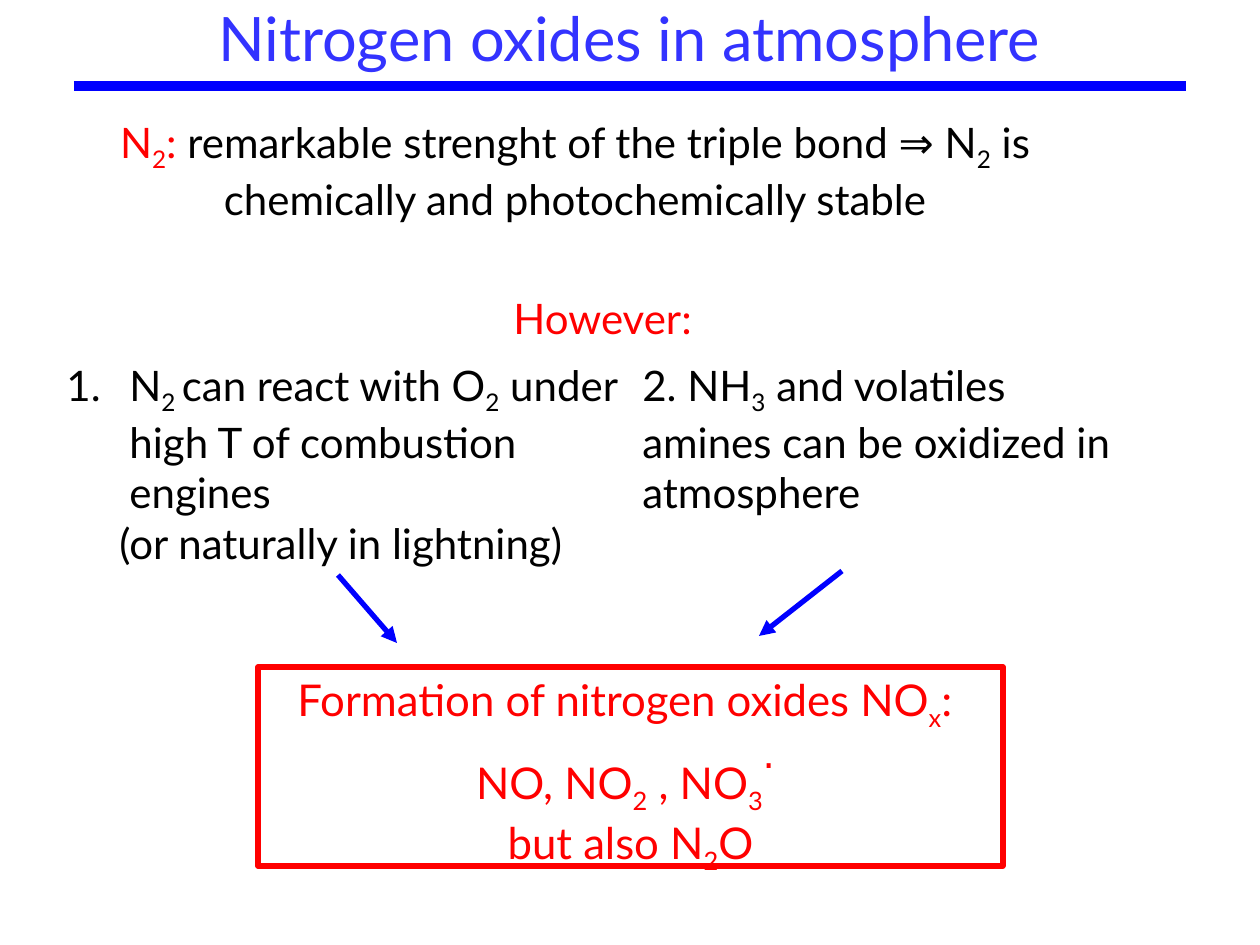
from lxml import etree
from pptx import Presentation
from pptx.dml.color import RGBColor
from pptx.enum.shapes import MSO_CONNECTOR, MSO_SHAPE
from pptx.enum.text import MSO_ANCHOR, MSO_AUTO_SIZE, PP_ALIGN
from pptx.oxml.ns import qn
from pptx.util import Pt

EMU_PER_PX = 914400 / 126
FONT = "Lato"
COLORS = {"title": "3333FF", "blue": "0000FF", "red": "FF0000", "black": "000000", "white": "FFFFFF"}
RECTANGLE = MSO_SHAPE.RECTANGLE
STRAIGHT = MSO_CONNECTOR.STRAIGHT
LEFT, CENTER = PP_ALIGN.LEFT, PP_ALIGN.CENTER
TOP, MIDDLE = MSO_ANCHOR.TOP, MSO_ANCHOR.MIDDLE
GROW, FIXED = MSO_AUTO_SIZE.SHAPE_TO_FIT_TEXT, MSO_AUTO_SIZE.NONE
SUBSCRIPT, SUPERSCRIPT = -25000, 30000


def px(value):
    """Turn pixels into EMU."""
    return round(value * EMU_PER_PX)


def color(name):
    """Look up a named colour."""
    return RGBColor.from_string(COLORS[name])


class SlideBuilder:
    """Adds styled elements to one slide."""

    def __init__(self, slide):
        self.shapes = slide.shapes

    def paragraph(self, frame, text, tone="black", size=24, align=LEFT, indent=0, numbered=False):
        """Add a paragraph whose subscripts stand between bars."""
        first = frame.paragraphs[0]
        paragraph = frame.add_paragraph() if first.runs else first
        paragraph.alignment = align
        paragraph.font.name, paragraph.font.size = FONT, Pt(size)
        paragraph.font.color.rgb = color(tone)
        properties = paragraph._p.get_or_add_pPr()
        if indent:
            properties.set("marL", str(px(indent)))
        if numbered:
            properties.set("indent", str(-px(indent)))
            number = etree.Element(qn("a:buAutoNum"), type="arabicPeriod")
            properties.insert(0, number)
        for index, part in enumerate(text.split("|")):
            if part:
                self.run(paragraph, part, SUBSCRIPT if index % 2 else 0)
        return paragraph

    def run(self, paragraph, text, baseline=0):
        """Add a run on, above or below the baseline."""
        run = paragraph.add_run()
        run.text = text
        if baseline:
            run._r.get_or_add_rPr().set("baseline", str(baseline))
        return run

    def text_box(self, left, top, width, height, anchor=TOP, auto_size=GROW):
        """Add a wrapping text box and return its text frame."""
        box = self.shapes.add_textbox(px(left), px(top), px(width), px(height))
        frame = box.text_frame
        frame.word_wrap, frame.auto_size, frame.vertical_anchor = True, auto_size, anchor
        return frame

    def outlined_box(self, left, top, width, height):
        """Add a white box with a red outline and return its text frame."""
        shape = self.shapes.add_shape(RECTANGLE, px(left), px(top), px(width), px(height))
        shape.shadow.inherit = False
        shape.fill.solid()
        shape.fill.fore_color.rgb = color("white")
        shape.line.color.rgb = color("red")
        shape.line.width = Pt(3)
        frame = shape.text_frame
        frame.word_wrap, frame.auto_size, frame.vertical_anchor = True, GROW, TOP
        return frame

    def line(self, start, end, width, arrow=False):
        """Add a straight blue line or arrow."""
        connector = self.shapes.add_connector(STRAIGHT, *map(px, start + end))
        connector.line.color.rgb = color("blue")
        connector.line.width = Pt(width)
        properties = connector._element.spPr
        if arrow:
            etree.SubElement(properties.find(qn("a:ln")), qn("a:tailEnd"), type="triangle")
        etree.SubElement(properties, qn("a:effectLst"))


def main():
    """Build the nitrogen oxides slide."""
    presentation = Presentation()
    presentation.slide_width, presentation.slide_height = px(1260), px(945)
    builder = SlideBuilder(presentation.slides.add_slide(presentation.slide_layouts[6]))

    title = builder.text_box(16, -11, 1227, 96, MIDDLE, FIXED)
    builder.paragraph(title, "Nitrogen oxides in atmosphere", "title", 35, CENTER)
    builder.line((74, 86), (1186, 86), 6)

    stability = builder.text_box(54, 110, 1042, 115)
    statement = builder.paragraph(
        stability,
        "N|2|: remarkable strenght of the triple bond ⇒ N|2| is chemically and photochemically stable",
        align=CENTER,
    )
    lead, subscript, rest = statement.runs[:3]
    rest.text = rest.text.removeprefix(": ")
    colon = builder.run(statement, ": ")
    subscript._r.addnext(colon._r)
    for run in (lead, subscript, colon):
        run.font.color.rgb = color("red")

    combustion = builder.text_box(54, 353, 576, 251)
    builder.paragraph(
        combustion, "N|2 |can react with O|2| under high T of combustion engines", indent=63, numbered=True
    )
    builder.paragraph(combustion, "(or naturally in lightning)", indent=53)

    however = builder.text_box(501, 286, 318, 63)
    builder.paragraph(however, "However:", "red")

    oxidation = builder.text_box(630, 353, 507, 165)
    builder.paragraph(oxidation, "2. NH|3| and volatiles amines can be oxidized in atmosphere")

    formation = builder.outlined_box(258, 667, 745, 199)
    builder.paragraph(formation, "Formation of nitrogen oxides NO|x|: ", "red", 25, CENTER)
    oxides = builder.paragraph(formation, "NO, NO|2| , NO|3|", "red", 25, CENTER)
    builder.run(oxides, "⋅ ", SUPERSCRIPT).font.size = Pt(38)
    builder.paragraph(formation, "but also N|2|O", "red", 25, CENTER)

    builder.line((338, 575), (397, 643), 3, arrow=True)
    builder.line((842, 571), (759, 636), 3, arrow=True)
    presentation.save("out.pptx")


if __name__ == "__main__":
    main()
